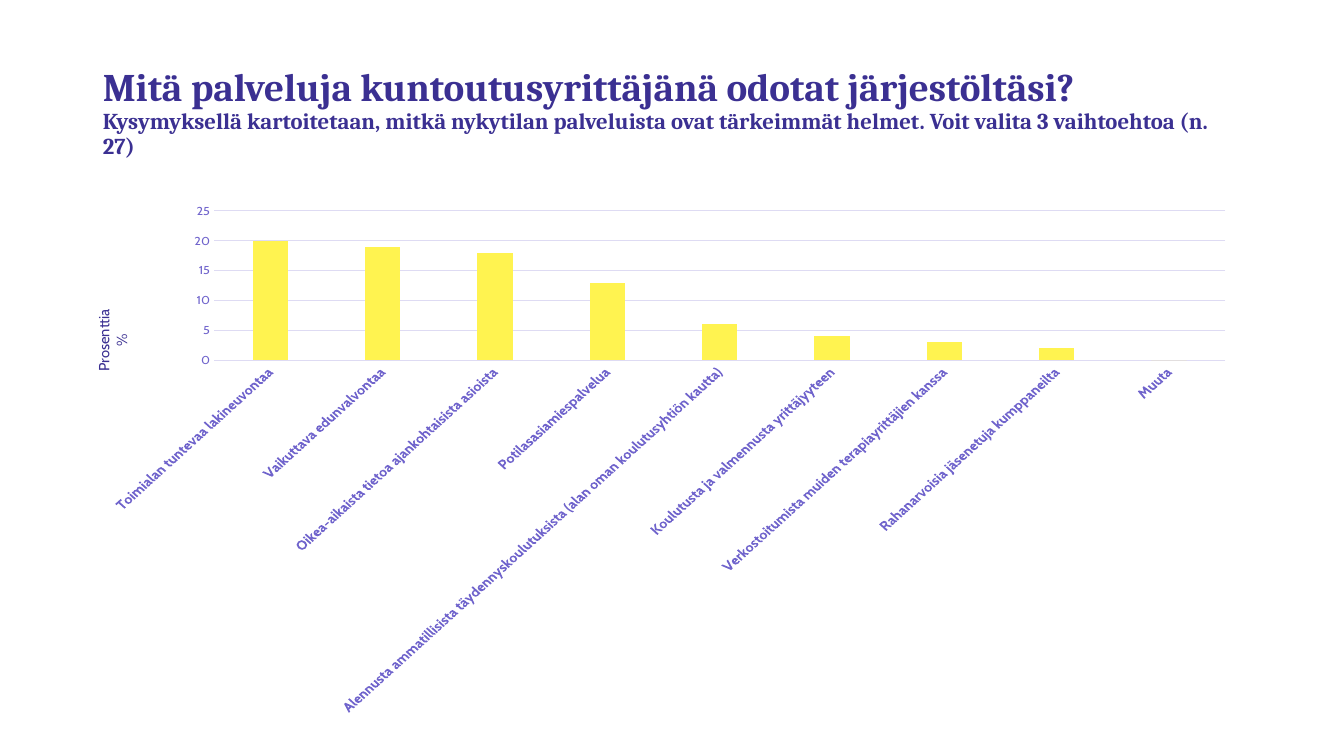
"""Build a slide with a column chart of the services expected from an association."""
import pptx
import pptx.chart.data
import pptx.dml.color
import pptx.enum.chart
import pptx.enum.text
import pptx.util
from pptx.util import Inches

TITLE = "Mitä palveluja kuntoutusyrittäjänä odotat järjestöltäsi? "
SUBTITLE = ("Kysymyksellä kartoitetaan, mitkä nykytilan palveluista ovat "
            "tärkeimmät helmet. Voit valita 3 vaihtoehtoa (n. 27)")
AXIS_TITLE = "Prosenttia %"
SERVICES = [
    ("Toimialan tuntevaa lakineuvontaa", 20),
    ("Vaikuttava edunvalvontaa", 19),
    ("Oikea-aikaista tietoa ajankohtaisista asioista", 18),
    ("Potilasasiamiespalvelua", 13),
    ("Alennusta ammatillisista täydennyskoulutuksista (alan oman koulutusyhtiön kautta)", 6),
    ("Koulutusta ja valmennusta yrittäjyyteen", 4),
    ("Verkostoitumista muiden terapiayrittäjien kanssa", 3),
    ("Rahanarvoisia jäsenetuja kumppaneilta", 2),
    ("Muuta", 0),
]
COLORS = {"text": "3B3092", "label": "7064CC", "grid": "DEDBF3", "bar": "FFF350"}
LEFT, WIDTH = Inches(0.92), Inches(11.5)
AUTO_ROTATION = "-60000000"


def rgb(name):
    """Return the named colour."""
    return pptx.dml.color.RGBColor.from_string(COLORS[name])


def style_font(font, size, color="text", name="Cabin", bold=False):
    """Format a font."""
    font.size = pptx.util.Pt(size)
    font.name = name
    font.bold = bold
    font.color.rgb = rgb(color)


def add_text(paragraph, text, **style):
    """Append a formatted run to a paragraph."""
    run = paragraph.add_run()
    run.text = text
    style_font(run.font, **style)


def style_line(line):
    """Draw a thin line in the grid colour."""
    line.color.rgb = rgb("grid")
    line.width = pptx.util.Pt(0.75)


def add_heading(slide):
    """Fill the title placeholder with the question and its explanation."""
    heading = slide.shapes.title
    heading.left, heading.top = LEFT, Inches(0.4)
    heading.width, heading.height = WIDTH, Inches(1.45)
    frame = heading.text_frame
    frame.word_wrap = True
    frame.auto_size = pptx.enum.text.MSO_AUTO_SIZE.NONE
    frame.vertical_anchor = pptx.enum.text.MSO_ANCHOR.MIDDLE
    paragraph = frame.paragraphs[0]
    paragraph.alignment = pptx.enum.text.PP_ALIGN.LEFT
    paragraph.line_spacing = 0.9
    add_text(paragraph, TITLE, size=27.9, name="Cambria", bold=True)
    paragraph.add_line_break()
    add_text(paragraph, SUBTITLE, size=16.2, name="Cambria", bold=True)


def add_service_chart(slide):
    """Add the column chart of services."""
    data = pptx.chart.data.CategoryChartData()
    data.categories = [service for service, _ in SERVICES]
    data.add_series("Series 1", [percent for _, percent in SERVICES])
    chart = slide.shapes.add_chart(
        pptx.enum.chart.XL_CHART_TYPE.COLUMN_CLUSTERED,
        LEFT, Inches(2), WIDTH, Inches(5.1), data).chart
    chart.has_title = False
    chart.has_legend = False
    style_font(chart.font, 10)

    columns = chart.plots[0]
    columns.gap_width, columns.overlap = 219, -27
    columns.vary_by_categories = False
    fill = columns.series[0].format.fill
    fill.solid()
    fill.fore_color.rgb = rgb("bar")

    services, percents = chart.category_axis, chart.value_axis
    for axis in (services, percents):
        axis.major_tick_mark = pptx.enum.chart.XL_TICK_MARK.NONE
        axis.minor_tick_mark = pptx.enum.chart.XL_TICK_MARK.NONE
    style_font(services.tick_labels.font, 10.5, color="label", bold=True)
    style_font(percents.tick_labels.font, 9, color="label")
    label_body = services._element.txPr.find(pptx.oxml.ns.qn("a:bodyPr"))
    label_body.set("rot", AUTO_ROTATION)
    style_line(services.format.line)
    percents.format.line.fill.background()
    percents.minimum_scale, percents.maximum_scale = 0, 25
    percents.major_unit = 5
    percents.has_major_gridlines = True
    style_line(percents.major_gridlines.format.line)


def add_axis_title(slide):
    """Add the rotated caption beside the value axis."""
    caption = slide.shapes.add_textbox(
        Inches(0.66), Inches(3.15), Inches(0.91), Inches(0.45))
    caption.rotation = 270
    frame = caption.text_frame
    frame.word_wrap = True
    frame.auto_size = pptx.enum.text.MSO_AUTO_SIZE.SHAPE_TO_FIT_TEXT
    paragraph = frame.paragraphs[0]
    paragraph.alignment = pptx.enum.text.PP_ALIGN.CENTER
    add_text(paragraph, AXIS_TITLE, size=10.5)


def main():
    """Create and save the presentation."""
    deck = pptx.Presentation()
    deck.slide_width, deck.slide_height = Inches(13.33), Inches(7.5)
    slide = deck.slides.add_slide(deck.slide_layouts[5])
    add_heading(slide)
    add_service_chart(slide)
    add_axis_title(slide)
    deck.save("out.pptx")


if __name__ == "__main__":
    main()
